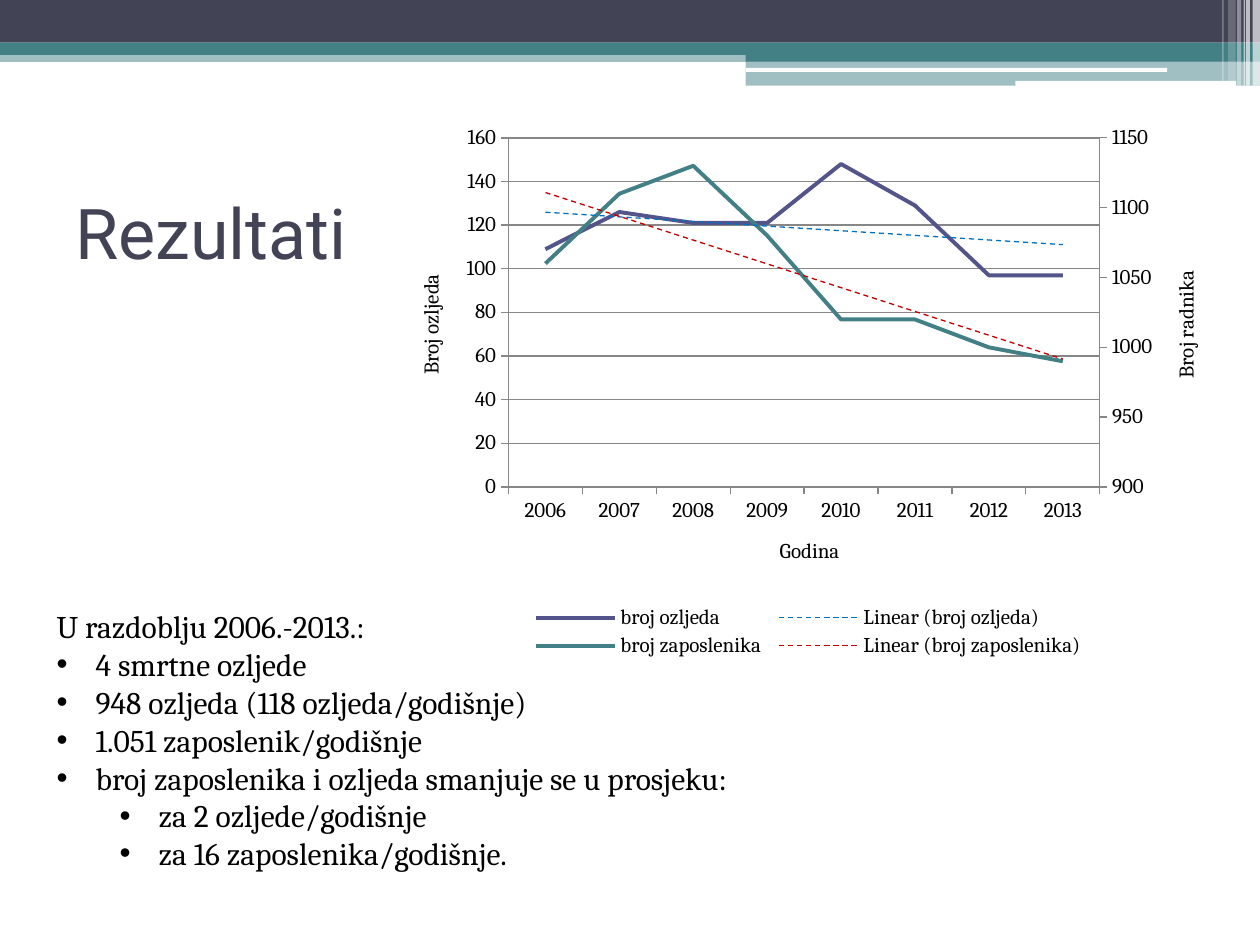
from copy import deepcopy
from dataclasses import dataclass

from lxml import etree
from pptx import Presentation
from pptx import oxml
from pptx.chart import data as chart_data
from pptx.dml import color as dml
from pptx.enum import chart as chart_enum, dml as line_enum, shapes, text
from pptx.oxml import ns
from pptx.util import Cm, Pt


@dataclass(frozen=True)
class Theme:
    dark: str = "424456"
    teal: str = "438086"
    violet: str = "53548A"
    white: str = "FFFFFF"
    black: str = "000000"
    grid: str = "878787"
    trend_blue: str = "0070C0"
    trend_red: str = "C00000"
    heading_font: str = "Roboto"
    body_font: str = "Cambria"
    title_size: int = 40
    body_size: int = 18
    chart_size: int = 12


THEME = Theme()
CHART_NS = 'xmlns:c="%s" xmlns:a="%s"' % (ns.nsuri("c"), ns.nsuri("a"))


def rgb(value):
    return dml.RGBColor.from_string(value)


def format_font(font, size, name=THEME.body_font, color=THEME.black, bold=False):
    font.size, font.name, font.bold = Pt(size), name, bold
    font.color.rgb = rgb(color)


def add_bar(slide, box, color, opacity=100, rounded=False):
    kind = shapes.MSO_SHAPE.ROUNDED_RECTANGLE if rounded else shapes.MSO_SHAPE.RECTANGLE
    shape = slide.shapes.add_shape(kind, *map(Cm, box))
    shape.shadow.inherit = False
    shape.line.fill.background()
    shape.fill.solid()
    shape.fill.fore_color.rgb = rgb(color)
    if opacity < 100:
        fill = shape.fill._xPr.find(ns.qn("a:solidFill"))[0]
        etree.SubElement(fill, ns.qn("a:alpha"), val=str(opacity * 1000))


def add_header(slide, left, top, width):
    right = left + width
    step = left + 15.03
    # Full-width bands
    add_bar(slide, (left, top + 1.02, width, 0.23), THEME.teal, 50)
    add_bar(slide, (left, top, width, 0.86), THEME.dark)
    add_bar(slide, (left, top + 0.86, width, 0.25), THEME.teal)
    # Stepped block on the right
    add_bar(slide, (step, top + 0.99, right - step, 0.25), THEME.teal)
    add_bar(slide, (step, top + 1.23, right - step, 0.5), THEME.teal, 50)
    add_bar(slide, (step, top + 1.37, 8.5, 0.08), THEME.white, rounded=True)
    add_bar(slide, (left + 20.47, top + 1.63, 4.45, 0.1), THEME.white, rounded=True)
    # Pale vertical stripes: distance from the right edge, width, height, opacity
    stripes = [(0.15, 0.15, 1.73, 65), (0.28, 0.08, 1.73, 65), (0.33, 0.03, 1.73, 60),
               (0.46, 0.08, 1.73, 40), (0.64, 0.15, 1.63, 20), (0.76, 0.03, 1.63, 30)]
    for distance, stripe_width, height, opacity in stripes:
        add_bar(slide, (right - distance, top, stripe_width, height), THEME.white, opacity)


def add_title(slide, box, wording):
    title = slide.shapes.title
    title.left, title.top, title.width, title.height = map(Cm, box)
    frame = title.text_frame
    frame.vertical_anchor = text.MSO_ANCHOR.MIDDLE
    paragraph = frame.paragraphs[0]
    paragraph.alignment = text.PP_ALIGN.LEFT
    run = paragraph.add_run()
    run.text = wording
    format_font(run.font, THEME.title_size, THEME.heading_font, THEME.dark)


def add_findings(slide, box, lines):
    """Lines are (wording, left indent in cm); an indent of 0 has no bullet."""
    frame = slide.shapes.add_textbox(*map(Cm, box)).text_frame
    frame.word_wrap = True
    for index, (wording, indent) in enumerate(lines):
        paragraph = frame.paragraphs[0] if index == 0 else frame.add_paragraph()
        run = paragraph.add_run()
        run.text = wording
        format_font(run.font, THEME.body_size)
        if indent:
            paragraph.level = 1 if indent > 1 else 0
            properties = paragraph._p.get_or_add_pPr()
            properties.set("marL", str(Cm(indent)))
            properties.set("indent", str(-Cm(0.79)))
            etree.SubElement(properties, ns.qn("a:buFont"), typeface="Arial")
            etree.SubElement(properties, ns.qn("a:buChar"), char="•")


def manual_layout(x, y, width, height, inner=False):
    target = '<c:layoutTarget val="inner"/>' if inner else ""
    return oxml.parse_xml(
        f'<c:layout {CHART_NS}><c:manualLayout>{target}<c:xMode val="edge"/>'
        f'<c:yMode val="edge"/><c:x val="{x}"/><c:y val="{y}"/>'
        f'<c:w val="{width}"/><c:h val="{height}"/></c:manualLayout></c:layout>')


def add_trend(series, color):
    trend = oxml.parse_xml(
        f'<c:trendline {CHART_NS}><c:name>Linear ({series.name})</c:name>'
        f'<c:spPr><a:ln w="{Pt(0.75)}"><a:solidFill><a:srgbClr val="{color}"/></a:solidFill>'
        '<a:prstDash val="dash"/></a:ln></c:spPr><c:trendlineType val="linear"/>'
        '<c:dispRSqr val="0"/><c:dispEq val="0"/></c:trendline>')
    series._element.find(ns.qn("c:cat")).addprevious(trend)


def format_axis(axis, wording):
    axis.has_major_gridlines = False
    axis.major_tick_mark = chart_enum.XL_TICK_MARK.OUTSIDE
    axis.minor_tick_mark = chart_enum.XL_TICK_MARK.NONE
    axis.format.line.color.rgb = rgb(THEME.grid)
    format_font(axis.tick_labels.font, THEME.chart_size)
    frame = axis.axis_title.text_frame
    frame.text = wording
    format_font(frame.paragraphs[0].runs[0].font, THEME.chart_size)


def set_scale(axis, low, high, unit):
    axis.minimum_scale, axis.maximum_scale, axis.major_unit = low, high, unit


def move_last_series_to_right_axis(chart, category_axis, value_axis, wording, scale):
    """Split the line plot in two and give the second its own pair of axes."""
    left_plot = chart._chartSpace.chart.plotArea.find(ns.qn("c:lineChart"))
    right_plot = deepcopy(left_plot)
    left_plot.remove(left_plot.findall(ns.qn("c:ser"))[-1])
    right_plot.remove(right_plot.findall(ns.qn("c:ser"))[0])
    left_plot.addnext(right_plot)

    category, value = category_axis._element, value_axis._element
    right_category, right_value = deepcopy(category), deepcopy(value)
    value.addnext(right_value)
    right_value.addnext(right_category)
    new_ids = {category.find(ns.qn("c:axId")).get("val"): "50010",
               value.find(ns.qn("c:axId")).get("val"): "50020"}
    for part in (right_plot, right_category, right_value):
        for tag in ("c:axId", "c:crossAx"):
            for element in part.findall(ns.qn(tag)):
                element.set("val", new_ids[element.get("val")])
    right_category.find(ns.qn("c:delete")).set("val", "1")
    right_category.remove(right_category.find(ns.qn("c:title")))
    right_value.find(ns.qn("c:axPos")).set("val", "r")
    right_value.find(ns.qn("c:crosses")).set("val", "max")
    right_value.find(".//" + ns.qn("a:t")).text = wording
    set_scale(type(value_axis)(right_value), *scale)


def add_injury_chart(slide, box):
    data = chart_data.CategoryChartData()
    data.categories = [str(year) for year in range(2006, 2014)]
    data.add_series("broj ozljeda", (109, 126, 121, 121, 148, 129, 97, 97))
    data.add_series("broj zaposlenika", (1060, 1110, 1130, 1080, 1020, 1020, 1000, 990))
    chart = slide.shapes.add_chart(
        chart_enum.XL_CHART_TYPE.LINE, *map(Cm, box), data).chart
    chart.has_title = False
    format_font(chart.font, THEME.chart_size)
    chart.plots[0].vary_by_categories = False

    # Series and their trend lines
    colors = [(THEME.violet, THEME.trend_blue), (THEME.teal, THEME.trend_red)]
    for series, (color, trend_color) in zip(chart.plots[0].series, colors):
        series.smooth = False
        series.marker.style = chart_enum.XL_MARKER_STYLE.NONE
        series.format.line.color.rgb = rgb(color)
        series.format.line.width = Pt(2.25)
        series.format.line.dash_style = line_enum.MSO_LINE.SOLID
        add_trend(series, trend_color)

    # Axes; the right one copies the left before gridlines are added
    year_axis, injury_axis = chart.category_axis, chart.value_axis
    format_axis(year_axis, "Godina")
    format_axis(injury_axis, "Broj ozljeda")
    move_last_series_to_right_axis(
        chart, year_axis, injury_axis, "Broj radnika", (900, 1150, 50))
    set_scale(injury_axis, 0, 160, 20)
    injury_axis.has_major_gridlines = True
    injury_axis.major_gridlines.format.line.color.rgb = rgb(THEME.grid)

    # Plot and legend positions
    plot_area = chart._chartSpace.chart.plotArea
    for layout in plot_area.findall(ns.qn("c:layout")):
        plot_area.remove(layout)
    plot_area.insert(0, manual_layout(0.14, 0.04, 0.71, 0.64, inner=True))
    chart.has_legend = True
    legend = chart.legend
    legend.position = chart_enum.XL_LEGEND_POSITION.BOTTOM
    legend.include_in_layout = False
    format_font(legend.font, THEME.chart_size)
    for layout in legend._element.findall(ns.qn("c:layout")):
        legend._element.remove(layout)
    legend._element.find(ns.qn("c:legendPos")).addnext(manual_layout(0.16, 0.89, 0.68, 0.11))


def main():
    presentation = Presentation()
    presentation.slide_width, presentation.slide_height = Cm(25.4), Cm(19.05)
    slide = presentation.slides.add_slide(presentation.slide_layouts[5])
    add_header(slide, 0, 0, 25.4)
    add_title(slide, (1.27, 3.18, 22.86, 2.97), "Rezultati")
    add_findings(slide, (0.89, 12.12, 23.39, 5.64), [
        ("U razdoblju 2006.-2013.:", 0),
        ("4 smrtne ozljede", 0.79),
        ("948 ozljeda (118 ozljeda/godišnje)", 0.79),
        ("1.051 zaposlenik/godišnje", 0.79),
        ("broj zaposlenika i ozljeda smanjuje se u prosjeku:", 0.79),
        ("za 2 ozljede/godišnje", 2.06),
        ("za 16 zaposlenika/godišnje.", 2.06)])
    add_injury_chart(slide, (7.9, 2.34, 16.79, 11))
    presentation.save("out.pptx")


if __name__ == "__main__":
    main()
